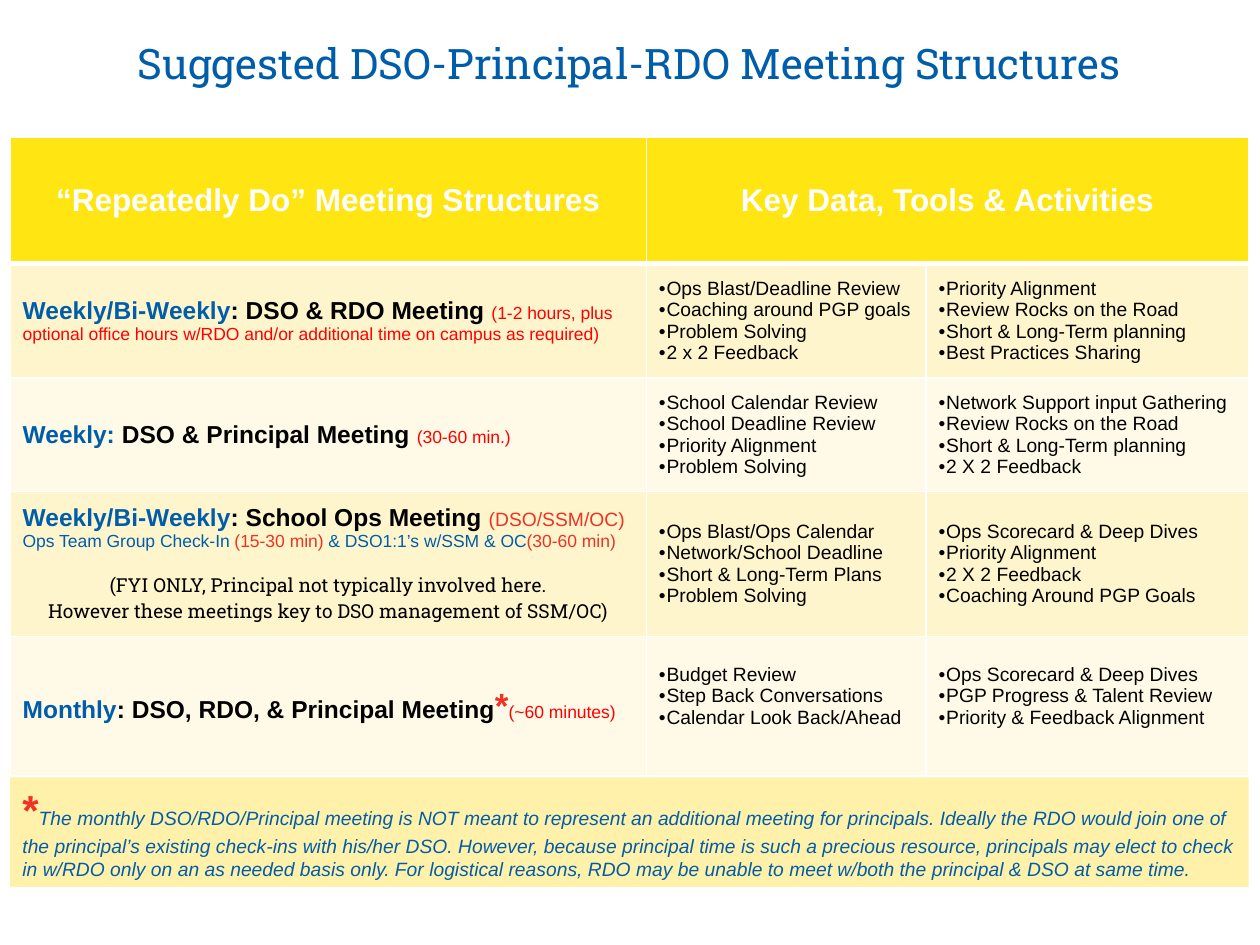
from dataclasses import dataclass

from lxml.etree import SubElement
from pptx import Presentation
from pptx.dml.color import RGBColor
from pptx.enum.shapes import MSO_SHAPE as Shape
from pptx.enum.text import MSO_ANCHOR as Anchor, MSO_AUTO_SIZE as AutoSize, PP_ALIGN as Align
from pptx.oxml.ns import qn
from pptx.util import Inches, Pt


@dataclass(frozen=True)
class Theme:
    sans: str = "Arial"
    slab: str = "Roboto Slab"
    blue: str = "005DAA"
    red: str = "FF0000"
    coral: str = "EE3224"
    black: str = "000000"
    white: str = "FFFFFF"
    header: str = "FFE512"
    bands: tuple = ("FFF5CC", "FFFAE7")
    note: str = "FFF0AA"
    title_size: int = 24
    header_size: int = 18
    meeting_size: int = 14
    body_size: int = 11
    small_size: int = 10
    star_size: int = 20
    note_star_size: int = 24


T = Theme()

# Run formats used in the meeting column and the footnote
WHEN = dict(size=T.meeting_size, color=T.blue, bold=True)
WHO = dict(size=T.meeting_size, color=T.black, bold=True)
DURATION = dict(size=T.small_size, color=T.red)
DETAIL = dict(size=T.small_size, color=T.blue)
DETAIL_TIME = dict(size=T.small_size, color=T.coral)
FYI = dict(font=T.slab)

TITLE = "Suggested DSO-Principal-RDO Meeting Structures"
HEADERS = ["“Repeatedly Do” Meeting Structures", "Key Data, Tools & Activities"]

# Each meeting: paragraphs of (text, format) runs, then two lists of activities
MEETINGS = [
    ([[("Weekly/Bi-Weekly", WHEN), (": DSO & RDO Meeting ", WHO),
       ("(1-2 hours, plus optional office hours w/RDO and/or additional time "
        "on campus as required)", DURATION)]],
     ["Ops Blast/Deadline Review", "Coaching around PGP goals", "Problem Solving",
      "2 x 2 Feedback"],
     ["Priority Alignment", "Review Rocks on the Road", "Short & Long-Term planning",
      "Best Practices Sharing"]),
    ([[("Weekly:", WHEN), (" DSO & Principal Meeting ", WHO), ("(30-60 min.)", DURATION)]],
     ["School Calendar Review", "School Deadline Review", "Priority Alignment",
      "Problem Solving"],
     ["Network Support input Gathering", "Review Rocks on the Road",
      "Short & Long-Term planning", "2 X 2 Feedback"]),
    ([[("Weekly/Bi-Weekly", WHEN), (": School Ops Meeting ", WHO),
       ("(DSO/SSM/OC)", dict(color=T.coral))],
      [("Ops Team Group Check-In ", DETAIL), ("(15-30 min) ", DETAIL_TIME),
       ("& DSO1:1’s w/SSM & OC", DETAIL), ("(30-60 min)", DETAIL_TIME)],
      [("(FYI ONLY, Principal not typically involved here.", FYI)],
      [("However these meetings key to DSO management of SSM/OC)", FYI)]],
     ["Ops Blast/Ops Calendar", "Network/School Deadline", "Short & Long-Term Plans",
      "Problem Solving"],
     ["Ops Scorecard & Deep Dives", "Priority Alignment", "2 X 2 Feedback",
      "Coaching Around PGP Goals"]),
    ([[("Monthly", WHEN), (": DSO, RDO, & Principal Meeting", WHO),
       ("*", dict(size=T.star_size, color=T.coral, bold=True)),
       ("(~60 minutes)", DURATION)]],
     ["Budget Review", "Step Back Conversations", "Calendar Look Back/Ahead"],
     ["Ops Scorecard & Deep Dives", "PGP Progress & Talent Review",
      "Priority & Feedback Alignment"]),
]
FOOTNOTE = [
    ("*", dict(size=T.note_star_size, color=T.coral, bold=True)),
    ("The monthly DSO/RDO/Principal meeting is NOT meant to represent an additional meeting "
     "for principals. Ideally the RDO would join one of the principal’s existing check-ins "
     "with his/her DSO. However, because principal time is such a precious resource, "
     "principals may elect to check in w/RDO only on an as needed basis only. For logistical "
     "reasons, RDO may be unable to meet w/both the principal & DSO at same time.",
     dict(color=T.blue, italic=True)),
]

LEFT, TABLE_TOP, NOTE_TOP, NOTE_HEIGHT = 0.08, 1.09, 6.17, 0.87
COLUMN_WIDTHS = [5.05, 2.22, 2.56]
ROW_HEIGHTS = [1, 0.91, 0.9, 1.15, 1.11]
BULLET_INDENT = 0.06
FYI_GAP = 12
LAST_ROW_TOP_MARGIN = 0.22


def add_text(paragraph, text, font=T.sans, size=T.body_size, color=T.black,
             bold=False, italic=False):
    run = paragraph.add_run()
    run.text = text
    run.font.name = font
    run.font.size = Pt(size)
    run.font.color.rgb = RGBColor.from_string(color)
    run.font.bold = bold
    run.font.italic = italic


def fill_paragraphs(frame, paragraphs):
    """Write lists of runs into a text frame and return its paragraphs."""
    for index, runs in enumerate(paragraphs):
        paragraph = frame.add_paragraph() if index else frame.paragraphs[0]
        for text, style in runs:
            add_text(paragraph, text, **style)
    return frame.paragraphs


def add_bullets(frame, items):
    for paragraph in fill_paragraphs(frame, [[(item, {})] for item in items]):
        properties = paragraph._p.get_or_add_pPr()
        properties.set("marL", str(Inches(BULLET_INDENT)))
        properties.set("indent", str(-Inches(BULLET_INDENT)))
        SubElement(properties, qn("a:buFont"), typeface=T.sans)
        SubElement(properties, qn("a:buChar"), char="•")


def style_cell(cell, color, bottom_width=1):
    properties = cell._tc.get_or_add_tcPr()
    for side, width in (("L", 1), ("R", 1), ("T", 1), ("B", bottom_width)):
        line = SubElement(properties, qn(f"a:ln{side}"), w=str(Pt(width)))
        SubElement(SubElement(line, qn("a:solidFill")), qn("a:srgbClr"), val=T.white)
    cell.fill.solid()
    cell.fill.fore_color.rgb = RGBColor.from_string(color)
    cell.vertical_anchor = Anchor.MIDDLE


def add_title(slide):
    title = slide.shapes.title
    title.left, title.top, title.width, title.height = map(Inches, (0.41, 0.25, 9.17, 0.67))
    frame = title.text_frame
    frame.auto_size = AutoSize.NONE
    frame.vertical_anchor = Anchor.TOP
    frame.margin_left = frame.margin_right = 0
    frame.paragraphs[0].alignment = Align.CENTER
    add_text(frame.paragraphs[0], TITLE, font=T.slab, size=T.title_size, color=T.blue)


def add_meeting_table(slide):
    table = slide.shapes.add_table(
        len(ROW_HEIGHTS), len(COLUMN_WIDTHS), Inches(LEFT), Inches(TABLE_TOP),
        Inches(sum(COLUMN_WIDTHS)), Inches(sum(ROW_HEIGHTS))).table
    for column, width in zip(table.columns, COLUMN_WIDTHS):
        column.width = Inches(width)
    for row, height in zip(table.rows, ROW_HEIGHTS):
        row.height = Inches(height)

    for cell in table.rows[0].cells:
        style_cell(cell, T.header, bottom_width=3)
    table.cell(0, 1).merge(table.cell(0, 2))
    for column, header in enumerate(HEADERS):
        paragraph = table.cell(0, column).text_frame.paragraphs[0]
        paragraph.alignment = Align.CENTER
        add_text(paragraph, header, size=T.header_size, color=T.white, bold=True)

    for row, (meeting, *activities) in enumerate(MEETINGS, start=1):
        for cell in table.rows[row].cells:
            style_cell(cell, T.bands[(row - 1) % 2])
        paragraphs = fill_paragraphs(table.cell(row, 0).text_frame, meeting)
        fyi_lines = [p for p, runs in zip(paragraphs, meeting) if runs[0][1] is FYI]
        for paragraph in fyi_lines:
            paragraph.alignment = Align.CENTER
        if fyi_lines:
            fyi_lines[0].space_before = Pt(FYI_GAP)
        for column, items in enumerate(activities, start=1):
            cell = table.cell(row, column)
            add_bullets(cell.text_frame, items)
            if row == len(MEETINGS):
                cell.vertical_anchor = Anchor.TOP
                cell.margin_top = Inches(LAST_ROW_TOP_MARGIN)


def add_footnote(slide):
    note = slide.shapes.add_shape(Shape.RECTANGLE, Inches(LEFT), Inches(NOTE_TOP),
                                  Inches(sum(COLUMN_WIDTHS)), Inches(NOTE_HEIGHT))
    note.shadow.inherit = False
    note.fill.solid()
    note.fill.fore_color.rgb = RGBColor.from_string(T.note)
    note.line.fill.background()
    note.text_frame.word_wrap = True
    note.text_frame.vertical_anchor = Anchor.TOP
    fill_paragraphs(note.text_frame, [FOOTNOTE])[0].alignment = Align.LEFT


def main():
    deck = Presentation()
    deck.slide_width, deck.slide_height = Inches(10), Inches(7.5)
    slide = deck.slides.add_slide(deck.slide_layouts.get_by_name("Title Only"))
    add_title(slide)
    add_meeting_table(slide)
    add_footnote(slide)
    deck.save("out.pptx")


if __name__ == "__main__":
    main()
